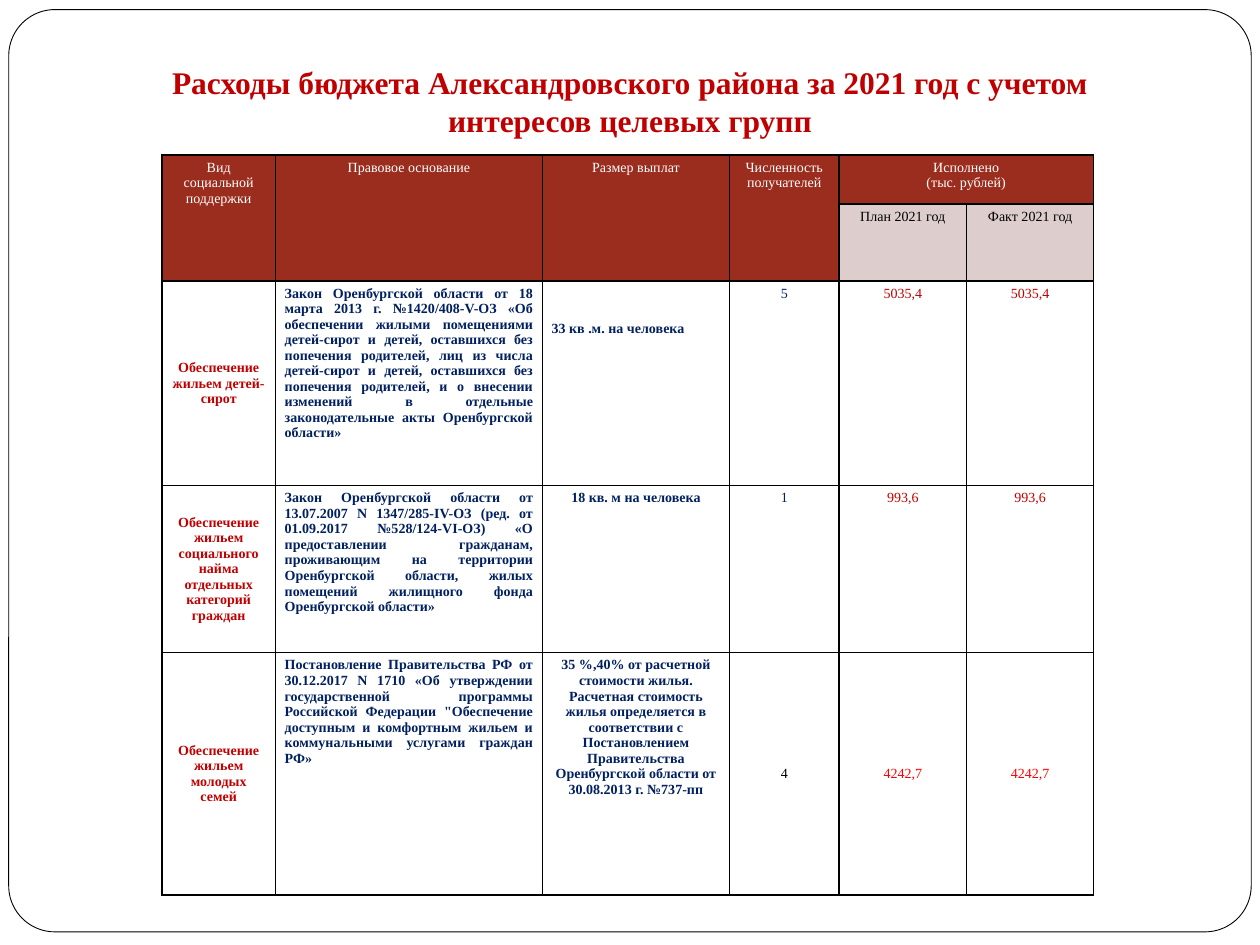
"""Build the slide with budget spending by target group."""
from lxml.etree import SubElement
from pptx import Presentation
from pptx.dml.color import RGBColor
from pptx.enum.shapes import MSO_SHAPE as SHAPE
from pptx.enum.text import MSO_ANCHOR as ANCHOR, MSO_AUTO_SIZE as AUTO, PP_ALIGN as AL
from pptx.oxml.ns import qn
from pptx.util import Pt

RED, NAVY, BRICK, PINK = "C00000", "002060", "9B2D1F", "DECDCD"
WHITE, BLACK, BRIGHT = "FFFFFF", "000000", "FF0000"


def rgb(value):
    return RGBColor.from_string(value)


def style(p, size, color, bold, align=AL.CENTER):
    p.alignment = align
    for r in p.runs:
        for key, value in dict(name="Times New Roman", size=Pt(size), bold=bold).items():
            setattr(r.font, key, value)
        r.font.color.rgb = rgb(color)


prs = Presentation()
prs.slide_width, prs.slide_height = Pt(720), Pt(540)
s = prs.slides.add_slide(prs.slide_layouts[5])

title = s.shapes.title
box = dict(left=Pt(60), top=Pt(32), width=Pt(600), height=Pt(51))
for key, value in box.items():
    setattr(title, key, value)
tf = title.text_frame
tf.text = "Расходы бюджета Александровского района за 2021 год с учетом интересов целевых групп"
for key, value in dict(word_wrap=True, auto_size=AUTO.NONE, vertical_anchor=ANCHOR.MIDDLE).items():
    setattr(tf, key, value)
style(tf.paragraphs[0], 18, RED, True)

sp = s.shapes.add_shape(SHAPE.ROUNDED_RECTANGLE, Pt(5), Pt(5.5), Pt(710), Pt(527))
sp.adjustments[0] = 0.05
sp.shadow.inherit = False
sp.fill.solid()
sp.fill.fore_color.rgb = rgb(WHITE)
sp.line.color.rgb = rgb(BLACK)
sp.line.width = Pt(0.5)
title.element.addprevious(sp.element)

rows = [
    ["Вид социальной поддержки", "Правовое основание", "Размер выплат",
     "Численность получателей", "Исполнено\n(тыс. рублей)", ""],
    ["", "", "", "", "План 2021 год", "Факт 2021 год"],
    ["Обеспечение жильем детей-сирот",
     "Закон Оренбургской области от 18 марта 2013 г. №1420/408-V-ОЗ «Об обеспечении "
     "жилыми помещениями детей-сирот и детей, оставшихся без попечения родителей, лиц "
     "из числа детей-сирот и детей, оставшихся без попечения родителей, и о внесении "
     "изменений в отдельные законодательные акты Оренбургской области»",
     "33 кв .м. на человека", "5", "5035,4", "5035,4"],
    ["Обеспечение жильем социального найма отдельных категорий граждан",
     "Закон Оренбургской области от 13.07.2007 N 1347/285-IV-ОЗ (ред. от 01.09.2017 "
     "№528/124-VI-ОЗ) «О предоставлении гражданам, проживающим на территории "
     "Оренбургской области, жилых помещений жилищного фонда Оренбургской области»",
     "18 кв. м на человека", "1", "993,6", "993,6"],
    ["Обеспечение жильем молодых семей",
     "Постановление Правительства РФ от 30.12.2017 N 1710 «Об утверждении "
     "государственной программы Российской Федерации \"Обеспечение доступным и "
     "комфортным жильем и коммунальными услугами граждан РФ»",
     "35 %,40% от расчетной стоимости жилья. Расчетная стоимость жилья определяется "
     "в соответствии с Постановлением Правительства Оренбургской области от "
     "30.08.2013 г. №737-пп", "4", "4242,7", "4242,7"],
]
widths = [65, 152.5, 107, 62.5, 73, 72.5]
heights = [28, 44, 117, 95.5, 138.5]
body_colors = [RED, NAVY, NAVY, NAVY, RED, RED]
last_colors = [RED, NAVY, NAVY, BLACK, BRIGHT, BRIGHT]

table = s.shapes.add_table(len(rows), len(widths), Pt(92.5), Pt(88.5),
                           Pt(sum(widths)), Pt(sum(heights))).table
table.first_row = table.horz_banding = False
for col, width in zip(table.columns, widths):
    col.width = Pt(width)
for row, height in zip(table.rows, heights):
    row.height = Pt(height)

for i, texts in enumerate(rows):
    for j, text in enumerate(texts):
        cell = table.cell(i, j)
        body, sub = i > 1, i == 1 and j > 3
        centred = body and (j == 0 or (i == 4 and j > 2))
        layout = dict(margin_left=Pt(5.2), margin_right=Pt(5.2), margin_top=Pt(2.7),
                      margin_bottom=Pt(2.7),
                      vertical_anchor=ANCHOR.MIDDLE if centred else ANCHOR.TOP)
        for key, value in layout.items():
            setattr(cell, key, value)
        tcPr = cell._tc.get_or_add_tcPr()
        for side in ("a:lnL", "a:lnR", "a:lnT", "a:lnB"):
            ln = SubElement(tcPr, qn(side), w=str(Pt(1)))
            SubElement(SubElement(ln, qn("a:solidFill")), qn("a:srgbClr"), val=BLACK)
        cell.fill.solid()
        cell.fill.fore_color.rgb = rgb(WHITE if body else PINK if sub else BRICK)
        if not text:
            continue
        cell.text = text
        colors = last_colors if i == 4 else body_colors
        color = colors[j] if body else BLACK if sub else WHITE
        for p in cell.text_frame.paragraphs:
            style(p, 8, color, body and j < 3, AL.JUSTIFY if body and j == 1 else AL.CENTER)

area = table.cell(2, 2)
area.margin_top = Pt(23)
area.text_frame.paragraphs[0].alignment = AL.LEFT

for j in range(4):
    table.cell(0, j).merge(table.cell(1, j))
table.cell(0, 4).merge(table.cell(0, 5))

prs.save("out.pptx")
